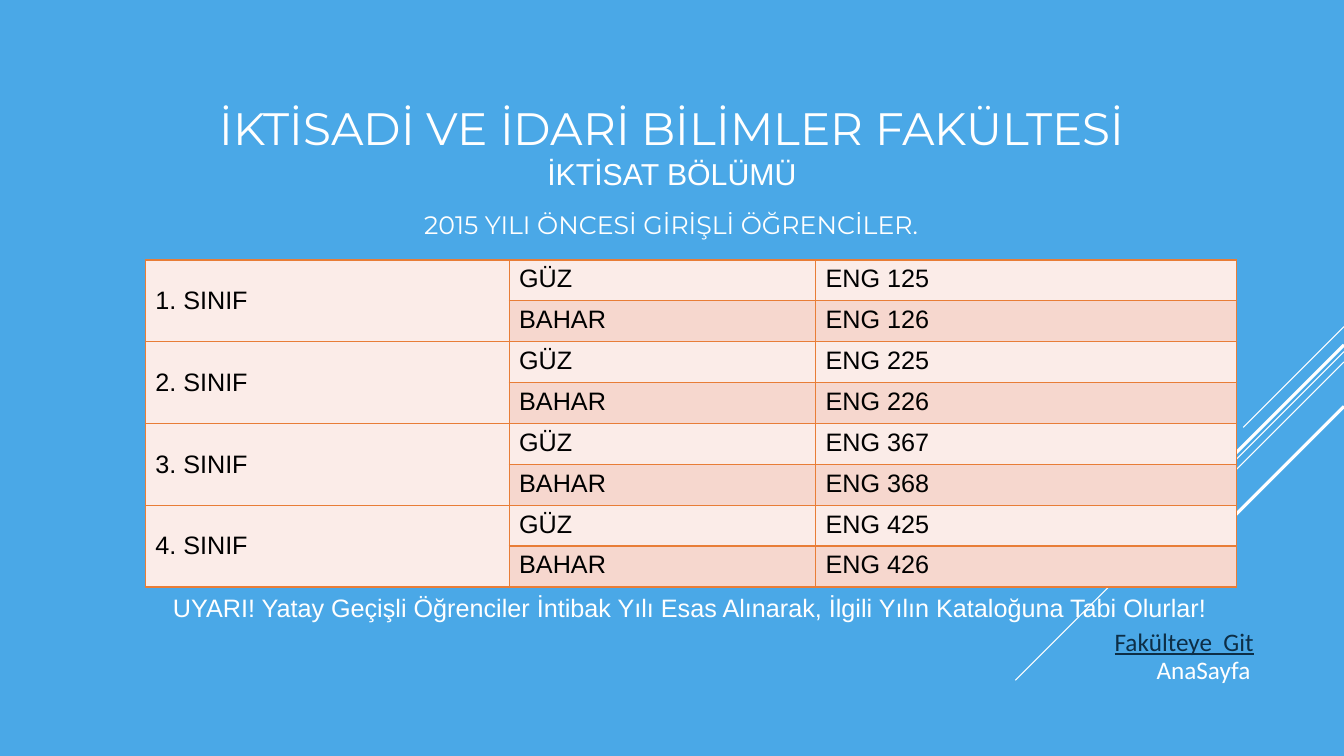
from lxml.etree import SubElement as Sub
from pptx import Presentation
from pptx.dml.color import RGBColor as Rgb
from pptx.enum.shapes import MSO_CONNECTOR as Link
from pptx.enum.text import MSO_ANCHOR as Anchor, PP_ALIGN as Align
from pptx.oxml.ns import qn
from pptx.util import Cm, Pt

HUES = {"sky": "4AA8E7", "white": "FFFFFF", "navy": "0D2E46", "black": "000000",
        "rule": "E87D37", "pale": "FBECE8", "rose": "F6D7CE"}
TITLE = [("İKTİSADİ VE İDARİ BİLİMLER FAKÜLTESİ", "Montserrat", 32.4),
         ("İKTİSAT BÖLÜMÜ", "Arial", 21.6)]
YEARS = [("1. SINIF", "ENG 125", "ENG 126"),
         ("2. SINIF", "ENG 225", "ENG 226"),
         ("3. SINIF", "ENG 367", "ENG 368"),
         ("4. SINIF", "ENG 425", "ENG 426")]
TERMS = [("GÜZ", "pale"), ("BAHAR", "rose")]
WIDTHS = [9.17, 7.72, 10.62]
ROW = 1.03
NOTES = [
    ("UYARI! Yatay Geçişli Öğrenciler İntibak Yılı Esas Alınarak, "
     "İlgili Yılın Kataloğuna Tabi Olurlar!",
     "Arial", "white", Align.LEFT, (4.11, 14.81, 26.62)),
    ("2015 YILI ÖNCESİ GİRİŞLİ ÖĞRENCİLER.",
     "Montserrat", "white", Align.CENTER, (5.97, 5.16, 21.89)),
    ("AnaSayfa", "Calibri", "white", Align.CENTER, (28.73, 16.36, 3.2)),
    ("Fakülteye  Git", "Calibri", "navy", Align.LEFT, (27.84, 15.65, 4.11)),
]
EDGE = 33.87
RAYS = [(8.23, 2.54, 0.75), (8.86, 8.28, 0.75), (9.12, 5.26, 0.75),
        (8.69, 4.85, 2.25), (10.24, 3.53, 2.25)]


def tint(name):
    return Rgb.from_string(HUES[name])


def write(para, text, face, size, hue):
    run = para.add_run()
    run.text = text
    run.font.name = face
    run.font.size = Pt(size)
    run.font.color.rgb = tint(hue)
    return run


def border(cell):
    props = cell._tc.get_or_add_tcPr()
    for spot, side in enumerate(("lnL", "lnR", "lnT", "lnB")):
        line = props.makeelement(qn("a:" + side), {"w": str(Pt(1))})
        fill = Sub(line, qn("a:solidFill"))
        Sub(fill, qn("a:srgbClr"), val=HUES["rule"])
        props.insert(spot, line)


def fill_cell(cell, text, hue, anchor):
    cell.fill.solid()
    cell.fill.fore_color.rgb = tint(hue)
    cell.vertical_anchor = anchor
    write(cell.text_frame.paragraphs[0], text, "Arial", 18, "black")


def draw_rays(slide):
    for top, span, width in RAYS:
        ray = slide.shapes.add_connector(
            Link.STRAIGHT, Cm(EDGE), Cm(top), Cm(EDGE - span), Cm(top + span))
        ray.line.color.rgb = tint("white")
        ray.line.width = Pt(width)
        Sub(ray._element.spPr, qn("a:effectLst"))


def draw_title(slide):
    title = slide.shapes.title
    title.left, title.top = Cm(3.18), Cm(1.73)
    title.width, title.height = Cm(27.51), Cm(3.89)
    title.text_frame.vertical_anchor = Anchor.MIDDLE
    para = title.text_frame.paragraphs[0]
    para.alignment = Align.CENTER
    para.line_spacing = 1.0
    for spot, (text, face, size) in enumerate(TITLE):
        if spot:
            para.add_line_break()
        write(para, text, face, size, "white")


def draw_notes(slide):
    for text, face, hue, align, (left, top, width) in NOTES:
        box = slide.shapes.add_textbox(Cm(left), Cm(top), Cm(width), Cm(1.02))
        box.text_frame.word_wrap = True
        para = box.text_frame.paragraphs[0]
        para.alignment = align
        run = write(para, text, face, 18, hue)
        run.font.underline = hue == "navy" or None


def draw_table(slide):
    count = len(YEARS) * len(TERMS)
    table = slide.shapes.add_table(
        count, len(WIDTHS), Cm(3.66), Cm(6.55),
        Cm(sum(WIDTHS)), Cm(ROW * count)).table
    table.first_row = table.horz_banding = False
    for col, width in zip(table.columns, WIDTHS):
        col.width = Cm(width)
    for row in table.rows:
        row.height = Cm(ROW)
    for year, (name, *codes) in enumerate(YEARS):
        first = year * len(TERMS)
        head = table.cell(first, 0)
        head.merge(table.cell(first + 1, 0))
        fill_cell(head, name, "pale", Anchor.MIDDLE)
        for step, ((term, hue), code) in enumerate(zip(TERMS, codes)):
            fill_cell(table.cell(first + step, 1), term, hue, Anchor.TOP)
            fill_cell(table.cell(first + step, 2), code, hue, Anchor.TOP)
    for cell in table.iter_cells():
        border(cell)


def main():
    deck = Presentation()
    deck.slide_width, deck.slide_height = Cm(EDGE), Cm(19.05)
    slide = deck.slides.add_slide(deck.slide_layouts[5])
    slide.background.fill.solid()
    slide.background.fill.fore_color.rgb = tint("sky")
    draw_rays(slide)
    draw_title(slide)
    draw_notes(slide)
    draw_table(slide)
    deck.save("out.pptx")


if __name__ == "__main__":
    main()
